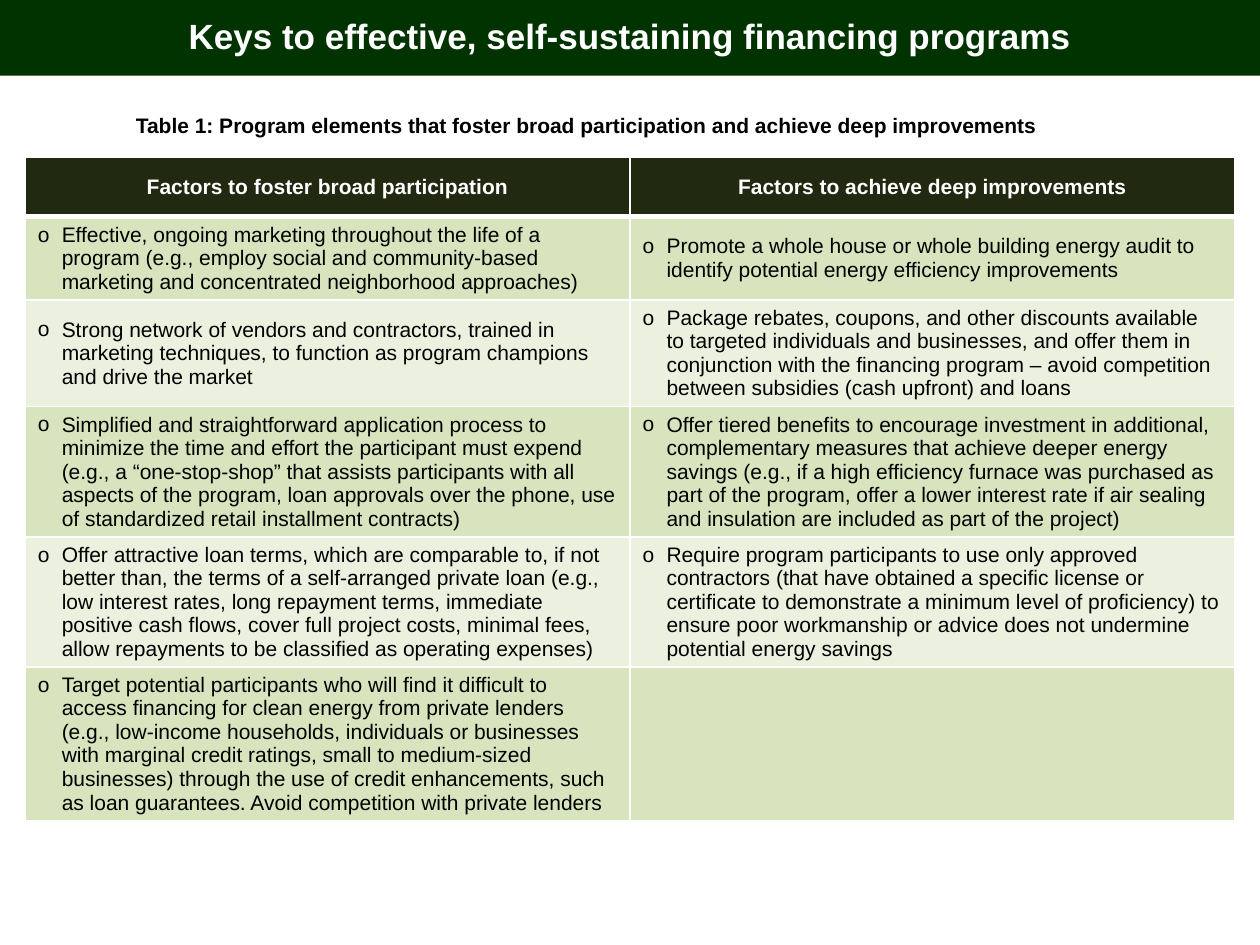
from lxml.etree import SubElement
from pptx import Presentation
from pptx.dml.color import RGBColor
from pptx.enum.text import MSO_ANCHOR as Anchor, MSO_AUTO_SIZE as AutoSize, PP_ALIGN as Align
from pptx.oxml.ns import qn
from pptx.util import Inches, Pt

TITLE = "Keys to effective, self-sustaining financing programs"
CAPTION = "Table 1: Program elements that foster broad participation and achieve deep improvements"
HEADINGS = ("Factors to foster broad participation", "Factors to achieve deep improvements")
FACTORS = [
    ("Effective, ongoing marketing throughout the life of a program (e.g., employ social and "
     "community-based marketing and concentrated neighborhood approaches)",
     "Promote a whole house or whole building energy audit to identify potential energy "
     "efficiency improvements"),
    ("Strong network of vendors and contractors, trained in marketing techniques, to function as "
     "program champions and drive the market",
     "Package rebates, coupons, and other discounts available to targeted individuals and "
     "businesses, and offer them in conjunction with the financing program – avoid competition "
     "between subsidies (cash upfront) and loans"),
    ("Simplified and straightforward application process to minimize the time and effort the "
     "participant must expend (e.g., a “one-stop-shop” that assists participants with all aspects "
     "of the program, loan approvals over the phone, use of standardized retail installment "
     "contracts)",
     "Offer tiered benefits to encourage investment in additional, complementary measures that "
     "achieve deeper energy savings (e.g., if a high efficiency furnace was purchased as part of "
     "the program, offer a lower interest rate if air sealing and insulation are included as part "
     "of the project)"),
    ("Offer attractive loan terms, which are comparable to, if not better than, the terms of a "
     "self-arranged private loan (e.g., low interest rates, long repayment terms, immediate "
     "positive cash flows, cover full project costs, minimal fees, allow repayments to be "
     "classified as operating expenses)",
     "Require program participants to use only approved contractors (that have obtained a specific "
     "license or certificate to demonstrate a minimum level of proficiency) to ensure poor "
     "workmanship or advice does not undermine potential energy savings"),
    ("Target potential participants who will find it difficult to access financing for clean "
     "energy from private lenders (e.g., low-income households, individuals or businesses with "
     "marginal credit ratings, small to medium-sized businesses) through the use of credit "
     "enhancements, such as loan guarantees. Avoid competition with private lenders",
     ""),
]
ROW_HEIGHTS = (0.47, 0.65, 0.83, 1.02, 1.02, 1.21)


def color(hex_string):
    return RGBColor.from_string(hex_string)


def paint(target, hex_string):
    target.fill.solid()
    target.fill.fore_color.rgb = color(hex_string)


class FinancingSlide:
    font = "Arial"
    white, black = "FFFFFF", "000000"
    band, heading = "003300", "212911"
    stripes = ("D7E4BD", "EBF1DE")
    indent = Inches(0.19)

    def __init__(self, deck):
        self.slide = deck.slides.add_slide(deck.slide_layouts[5])

    def add_text(self, frame, text, size=12, ink=black, bold=False, align=Align.LEFT, gap=6):
        paragraph = frame.paragraphs[0]
        paragraph.alignment = align
        paragraph.space_before = paragraph.space_after = Pt(gap)
        run = paragraph.add_run()
        run.text = text
        run.font.name, run.font.size, run.font.bold = self.font, Pt(size), bold
        run.font.color.rgb = color(ink)
        return paragraph

    def title(self, text, left, top, width, height):
        title = self.slide.shapes.title
        title.left, title.top = Inches(left), Inches(top)
        title.width, title.height = Inches(width), Inches(height)
        paint(title, self.band)
        frame = title.text_frame
        frame.auto_size, frame.vertical_anchor = AutoSize.NONE, Anchor.MIDDLE
        self.add_text(frame, text, 20, self.white, True, Align.CENTER, gap=0)

    def caption(self, text, left, top, width, height):
        box = self.slide.shapes.add_textbox(*map(Inches, (left, top, width, height)))
        box.text_frame.word_wrap = True
        self.add_text(box.text_frame, text, bold=True)

    def bullet(self, paragraph):
        properties = paragraph._p.get_or_add_pPr()
        properties.set("marL", str(self.indent))
        properties.set("indent", str(-self.indent))
        SubElement(properties, qn("a:buFont"), typeface=self.font)
        SubElement(properties, qn("a:buChar"), char="o")

    def borders(self, cell, **widths):
        """Draw white cell borders; widths are points by side: L, R, T, B."""
        properties = cell._tc.get_or_add_tcPr()
        for side, width in widths.items():
            line = SubElement(properties, qn(f"a:ln{side}"), w=str(Pt(width)))
            fill = SubElement(line, qn("a:solidFill"))
            SubElement(fill, qn("a:srgbClr"), val=self.white)

    def table(self, headings, rows, heights, left, top, width):
        shape = self.slide.shapes.add_table(
            len(heights), len(headings), Inches(left), Inches(top),
            Inches(width), Inches(sum(heights)))
        table = shape.table
        for table_row, height in zip(table.rows, heights):
            table_row.height = Inches(height)
        for r, texts in enumerate([headings, *rows]):
            is_heading = r == 0
            for c, text in enumerate(texts):
                cell = table.cell(r, c)
                cell.vertical_anchor = Anchor.MIDDLE
                self.borders(cell, L=1, R=1, T=3 if r == 1 else 1, B=3 if is_heading else 1)
                paint(cell, self.heading if is_heading else self.stripes[(r - 1) % 2])
                if is_heading:
                    self.add_text(cell.text_frame, text, ink=self.white, bold=True,
                                  align=Align.CENTER)
                elif text:
                    self.bullet(self.add_text(cell.text_frame, text))


def main():
    deck = Presentation()
    deck.slide_width, deck.slide_height = Inches(10), Inches(7.5)
    page = FinancingSlide(deck)
    page.title(TITLE, 0, -0.03, 10, 0.63)
    page.table(HEADINGS, FACTORS, ROW_HEIGHTS, 0.2, 1.25, 9.6)
    page.caption(CAPTION, 0.98, 0.84, 8.03, 0.39)
    deck.save("out.pptx")


if __name__ == "__main__":
    main()
